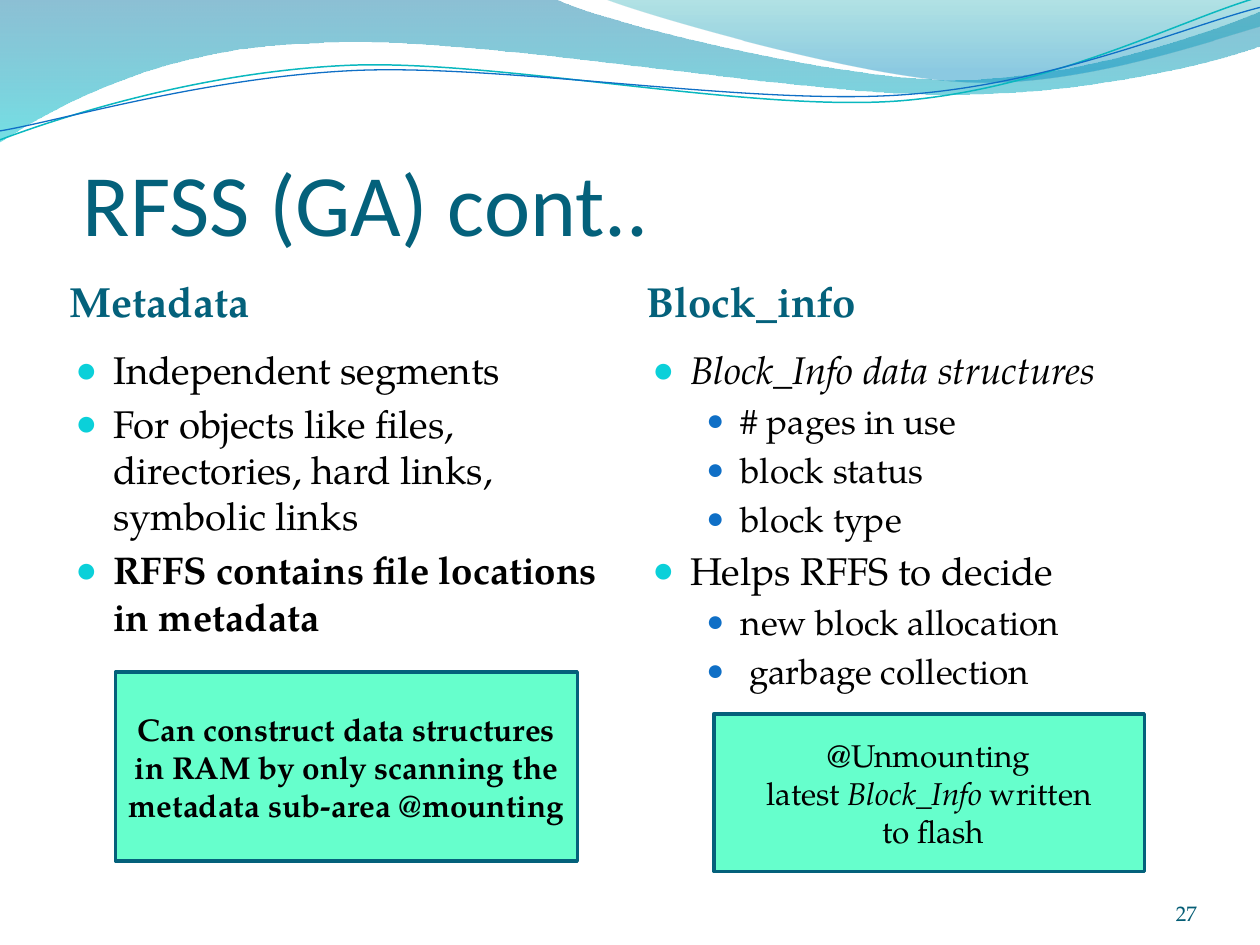
import pptx
import pptx.dml.color
import pptx.enum.shapes
import pptx.enum.text
import pptx.oxml
import pptx.oxml.ns
import pptx.util

Cm = pptx.util.Cm
Pt = pptx.util.Pt
qn = pptx.oxml.ns.qn
Anchor = pptx.enum.text.MSO_ANCHOR
Align = pptx.enum.text.PP_ALIGN
SERIF = "TeX Gyre Pagella"
TEAL = "04617B"
LEVELS = [
    {"size": 22, "left": 0.76, "hang": 0.76, "color": "0BD0D9", "scale": 95},
    {"size": 20, "left": 1.78, "hang": 0.69, "color": "0F6FC6", "scale": 85},
]
FILLS = [
    ([(0, "0074A1", 45), (1, "00C6CF", 55)],
     [(0, 0), (11.18, -0.03), (12.09, 0.43, 16.87, 1.6, 19.25, 1.6),
      (21.67, 1.6, 24.33, 0.66, 25.4, 0.23), (25.43, 0.91),
      (24.97, 1.12, 22.1, 1.93, 18.95, 1.9), (15.8, 1.9, 9.7, 0.71, 6.53, 0.86),
      (3.28, 0.91, 1.17, 2.11, -0.03, 2.87), (0, 0)]),
    ([(0, "00A1A9", 30), (0.8, "008BBF", 45)],
     [(12.17, -0.03), (12.93, 0.28, 17.32, 1.57, 19.53, 1.65),
      (21.74, 1.75, 24.41, 0.81, 25.4, 0.53), (25.4, 0), (12.17, -0.03)]),
]
LINES = [
    ("0AB8BF", 0.85,
     [(-0.05, 2.22), (1.19, 1.82, 4.02, 1.04, 7.05, 1.05),
      (10.05, 1.07, 15.02, 2.37, 18.08, 2.29), (21.13, 2.2, 23.87, 0.91, 25.41, 0.55)]),
    ("0F6FC6", 0.75,
     [(-0.04, 2.04), (1.16, 1.9, 4.18, 1.15, 7.2, 1.16),
      (10.25, 1.18, 15.13, 2.25, 18.19, 2.17), (21.21, 2.1, 23.93, 1.06, 25.45, 0.75)]),
]


def tint(code):
    """Return the colour of a hex string."""
    return pptx.dml.color.RGBColor.from_string(code)


def assign(item, values):
    """Set each attribute of an item from a dict."""
    for name, value in values.items():
        setattr(item, name, value)


def place(shape, box):
    """Move a shape to a box given in centimetres."""
    assign(shape, dict(zip(("left", "top", "width", "height"), map(Cm, box))))


def frame(shape, anchor, pads):
    """Set the anchor and the four insets of a text frame."""
    names = ("margin_left", "margin_top", "margin_right", "margin_bottom")
    assign(shape.text_frame, {"word_wrap": True, "vertical_anchor": anchor,
                              "auto_size": pptx.enum.text.MSO_AUTO_SIZE.NONE,
                              **dict(zip(names, map(Cm, pads)))})


def write(para, text, size, color="000000", name=SERIF, **style):
    """Add one formatted run to a paragraph."""
    run = para.add_run()
    run.text = text
    assign(run.font, {"size": Pt(size), "name": name, **style})
    run.font.color.rgb = tint(color)


def lines(shape, count):
    """Return the given number of paragraphs of a shape."""
    text = shape.text_frame
    return [text.paragraphs[0]] + [text.add_paragraph() for _ in range(count - 1)]


def curve(slide, parts, depth, close):
    """Draw an outline of straight and cubic parts at a given depth."""
    points = [(Cm(x), Cm(y)) for part in parts for x, y in zip(part[::2], part[1::2])]
    pen = slide.shapes.build_freeform(*points[0])
    pen.add_line_segments(points[1:], close=close)
    shape = pen.convert_to_shape()
    shape.shadow.inherit = False
    legs = iter(list(shape._element.iter(qn("a:lnTo"))))
    for part in parts[1:]:
        leg = next(legs)
        if len(part) == 6:
            bend = leg.makeelement(qn("a:cubicBezTo"))
            leg.addprevious(bend)
            for old in (leg, next(legs), next(legs)):
                bend.append(old[0])
                old.getparent().remove(old)
    slide.shapes._spTree.insert(2 + depth, shape._element)
    return shape


def waves(slide):
    """Draw the shaded waves and the thin lines at the top."""
    for depth, (stops, parts) in enumerate(FILLS):
        shape = curve(slide, parts, depth, True)
        shape.line.fill.background()
        shape.fill.gradient()
        shape.fill.gradient_angle = 270
        for stop, (spot, code, _) in zip(shape.fill.gradient_stops, stops):
            stop.position = spot
            stop.color.rgb = tint(code)
        marks = shape._element.spPr.iter(qn("a:srgbClr"))
        for mark, (_, _, alpha) in zip(marks, stops):
            mark.append(mark.makeelement(qn("a:alpha"), {"val": str(alpha * 1000)}))
    for depth, (code, width, parts) in enumerate(LINES, len(FILLS)):
        shape = curve(slide, parts, depth, False)
        shape.rotation = 357.3
        shape.fill.background()
        shape.line.color.rgb = tint(code)
        shape.line.width = Pt(width)


def bullet(para, level):
    """Give a paragraph the indent and bullet of its level."""
    rule = LEVELS[level]
    para.level = level
    props = para._p.get_or_add_pPr()
    props.set("marL", str(Cm(rule["left"])))
    props.set("indent", str(-Cm(rule["hang"])))
    space = pptx.oxml.ns.nsdecls("a")
    for xml in (f'<a:buClr {space}><a:srgbClr val="{rule["color"]}"/></a:buClr>',
                f'<a:buSzPct {space} val="{rule["scale"] * 1000}"/>',
                f'<a:buChar {space} char="●"/>'):
        props.append(pptx.oxml.parse_xml(xml))


def title(shape, box, text):
    """Fill the title placeholder."""
    place(shape, box)
    frame(shape, Anchor.BOTTOM, (0, 0.13, 0, 0))
    para = shape.text_frame.paragraphs[0]
    para.alignment = Align.LEFT
    write(para, text, 50, TEAL, "Calibri", bold=False)


def column(head, body, box, label, items):
    """Fill a heading and the bulleted list below it."""
    left, top, width, height = box
    gap = 1.83
    place(head, (left, top, width, gap))
    frame(head, Anchor.MIDDLE, (0.13, 0, 0.13, 0))
    write(head.text_frame.paragraphs[0], label, 24, TEAL, bold=True)
    place(body, (left, top + gap, width, height - gap))
    frame(body, Anchor.TOP, (0.25, 0, 0.25, 0.13))
    for para, (level, text, style) in zip(lines(body, len(items)), items):
        bullet(para, level)
        write(para, text, LEVELS[level]["size"], **style)


def card(slide, box, rows):
    """Draw a green card with centred rows of runs."""
    shape = slide.shapes.add_shape(pptx.enum.shapes.MSO_SHAPE.RECTANGLE, *map(Cm, box))
    shape.shadow.inherit = False
    shape.fill.solid()
    shape.fill.fore_color.rgb = tint("66FFCC")
    shape.line.color.rgb = tint(TEAL)
    shape.line.width = Pt(2)
    frame(shape, Anchor.MIDDLE, (0.25, 0.13, 0.25, 0.13))
    for para, runs in zip(lines(shape, len(rows)), rows):
        para.alignment = Align.CENTER
        for text, style in runs:
            write(para, text, 18, **style)


def number(slide, box, text):
    """Write the page number."""
    shape = slide.shapes.add_textbox(*map(Cm, box))
    frame(shape, Anchor.BOTTOM, (0, 0, 0, 0))
    para = shape.text_frame.paragraphs[0]
    para.alignment = Align.RIGHT
    write(para, text, 12, "045D75")


def main():
    """Build and save the slide."""
    deck = pptx.Presentation()
    deck.slide_width, deck.slide_height = Cm(25.4), Cm(19.05)
    slide = deck.slides.add_slide(deck.slide_layouts[4])
    waves(slide)
    top, left_head, left_body, right_head, right_body = slide.placeholders
    bold, slant = {"bold": True}, {"italic": True}
    title(top, (1.27, 1.95, 22.86, 3.18), " RFSS (GA) cont..")
    column(left_head, left_body, (1.27, 5.15, 11.23, 12.52), "Metadata", [
        (0, "Independent segments", {}),
        (0, "For objects like files, directories, hard links, symbolic links", {}),
        (0, "RFFS contains file locations in metadata", bold)])
    column(right_head, right_body, (12.9, 5.15, 11.23, 12.52), "Block_info", [
        (0, "Block_Info data structures", slant),
        (1, "# pages in use", {}), (1, "block status", {}), (1, "block type", {}),
        (0, "Helps RFFS to decide", {}),
        (1, "new block allocation", {}), (1, " garbage collection", {})])
    card(slide, (2.33, 13.55, 9.31, 3.81), [[(
        "Can construct data structures in RAM by only scanning the "
        "metadata sub-area @mounting", bold)]])
    card(slide, (14.39, 14.39, 8.68, 3.18), [
        [("@Unmounting", {})],
        [("latest ", {}), ("Block_Info ", slant), ("written", {})],
        [(" to flash", {})]])
    number(slide, (22.02, 17.65, 2.11, 1.02), "27")
    deck.save("out.pptx")


if __name__ == "__main__":
    main()
